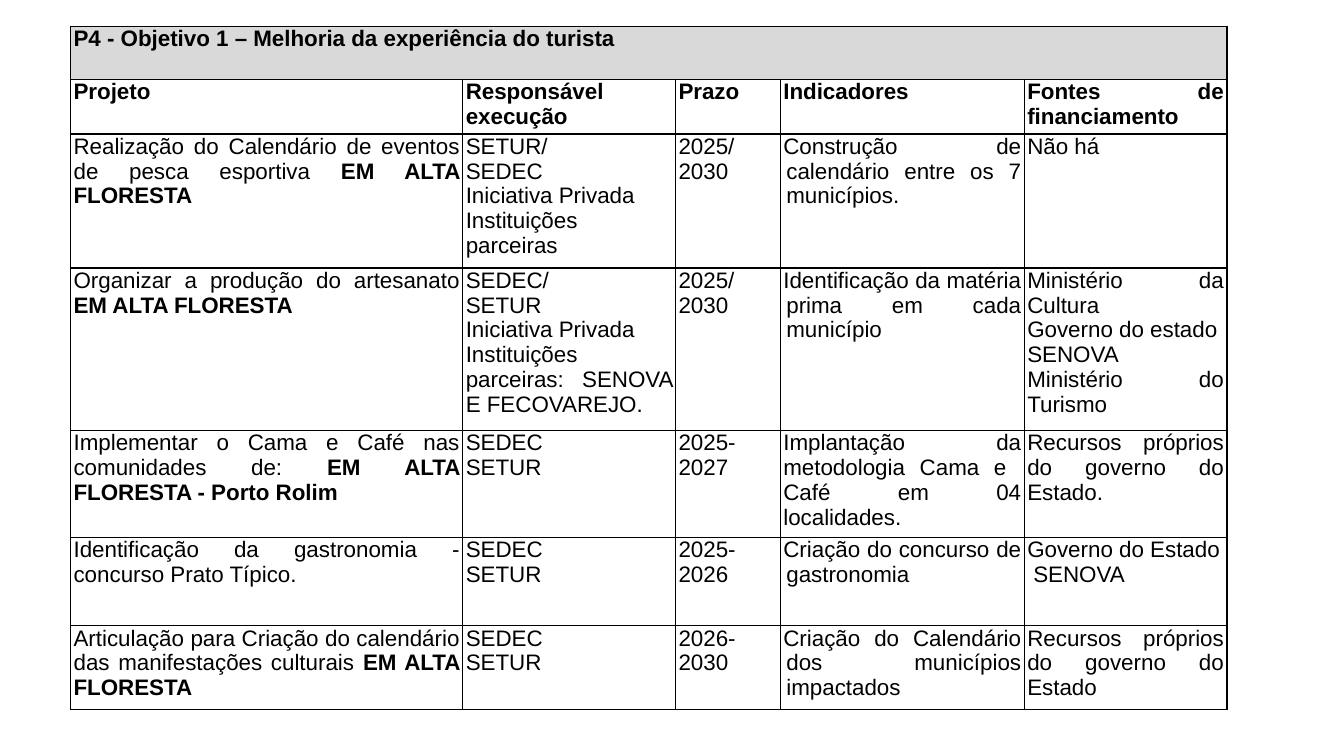
from dataclasses import dataclass

from lxml.etree import SubElement
from pptx import Presentation
from pptx.dml.color import RGBColor
from pptx.enum.text import MSO_ANCHOR as Anchor, PP_ALIGN as Align
from pptx.oxml.ns import qn
from pptx.util import Inches, Pt


@dataclass(frozen=True)
class Theme:
    """Colours, type and spacing of the slide."""
    font: str = "Arial"
    size: int = 16
    ink: str = "000000"
    heading_fill: str = "D9D9D9"
    border_points: int = 1
    cell_margin: float = 0.03


THEME = Theme()
COLUMN_WIDTHS = [3.89, 2.11, 1.04, 2.42, 2.01]
ROW_HEIGHTS = [0.53, 0.54, 1.33, 1.61, 1.06, 0.88, 0.83]
TITLE = "P4 - Objetivo 1 – Melhoria da experiência do turista"
HEADERS = ["Projeto", "Responsável execução", "Prazo", "Indicadores", "Fontes de financiamento"]
BOLD_MARK = "**"
PROJECTS = [
    ["Realização do Calendário de eventos de pesca esportiva **EM ALTA FLORESTA",
     ["SETUR/", "SEDEC", "Iniciativa Privada", "Instituições parceiras"],
     ["2025/", "2030"],
     "Construção de calendário entre os 7 municípios.",
     "Não há"],
    ["Organizar a produção do artesanato **EM ALTA FLORESTA",
     ["SEDEC/", "SETUR", "Iniciativa Privada", "Instituições parceiras: SENOVA E FECOVAREJO."],
     ["2025/", "2030"],
     "Identificação da matéria prima em cada município",
     ["Ministério da Cultura", "Governo do estado", "SENOVA", "Ministério do Turismo"]],
    ["Implementar o Cama e Café nas comunidades de: **EM ALTA FLORESTA - Porto Rolim",
     ["SEDEC", "SETUR"],
     "2025-2027",
     "Implantação da metodologia Cama e \nCafé em 04 localidades.",
     "Recursos próprios do governo do Estado."],
    ["Identificação da gastronomia - concurso Prato Típico.",
     ["SEDEC", "SETUR"],
     "2025-2026",
     "Criação do concurso de gastronomia",
     ["Governo do Estado", "SENOVA"]],
    ["Articulação para Criação do calendário das manifestações culturais **EM ALTA FLORESTA",
     ["SEDEC", "SETUR"],
     "2026-2030",
     "Criação do Calendário dos municípios impactados",
     "Recursos próprios do governo do Estado"],
]
HANGING = (0.03, -0.03)
INDENTS = {(row, 3): [HANGING] for row in (2, 3, 5, 6)}
INDENTS[5, 4] = [(0, 0), (0.06, 0)]


def add_run(paragraph, text, bold):
    """Add one run in the theme's type."""
    run = paragraph.add_run()
    run.text = text
    formats = {"name": THEME.font, "size": Pt(THEME.size), "bold": bold}
    for name, value in formats.items():
        setattr(run.font, name, value)
    run.font.color.rgb = RGBColor.from_string(THEME.ink)


def write_paragraph(paragraph, text, bold, indent):
    """Write justified text, bold after the mark, with line breaks and an indent."""
    paragraph.alignment = Align.JUSTIFY
    properties = paragraph._p.get_or_add_pPr()
    for name, length in zip(("marL", "indent"), indent):
        properties.set(name, str(Inches(length)))
    for part_index, part in enumerate(text.split(BOLD_MARK)):
        for line_index, line in enumerate(part.split("\n")):
            if line_index:
                paragraph.add_line_break()
            add_run(paragraph, line, bold or part_index > 0)


def write_cell(cell, content, bold, indents):
    """Fill a cell with one paragraph for each line of its content."""
    lines = [content] if isinstance(content, str) else content
    frame = cell.text_frame
    for index, line in enumerate(lines):
        paragraph = frame.paragraphs[0] if index == 0 else frame.add_paragraph()
        write_paragraph(paragraph, line, bold, indents[min(index, len(indents) - 1)])


def style_cell(cell, fill):
    """Set margins, fill and the four borders of a cell."""
    margin = Inches(THEME.cell_margin)
    formats = {"margin_left": margin, "margin_right": margin, "margin_top": 0,
               "margin_bottom": 0, "vertical_anchor": Anchor.TOP}
    for name, value in formats.items():
        setattr(cell, name, value)
    properties = cell._tc.get_or_add_tcPr()
    for side in ("a:lnL", "a:lnR", "a:lnT", "a:lnB"):
        line = SubElement(properties, qn(side), w=str(Pt(THEME.border_points)))
        SubElement(SubElement(line, qn("a:solidFill")), qn("a:srgbClr"), val=THEME.ink)
    if fill:
        cell.fill.solid()
        cell.fill.fore_color.rgb = RGBColor.from_string(fill)
    else:
        cell.fill.background()


def add_project_table(slide, left, top):
    """Place the table of projects with its merged heading row."""
    width, height = sum(COLUMN_WIDTHS), sum(ROW_HEIGHTS)
    table = slide.shapes.add_table(
        len(ROW_HEIGHTS), len(COLUMN_WIDTHS),
        Inches(left), Inches(top), Inches(width), Inches(height)).table
    table.first_row = table.horz_banding = False
    for column, column_width in zip(table.columns, COLUMN_WIDTHS):
        column.width = Inches(column_width)
    for row, row_height in zip(table.rows, ROW_HEIGHTS):
        row.height = Inches(row_height)
    for cell in table.rows[0].cells:
        style_cell(cell, THEME.heading_fill)
    table.cell(0, 0).merge(table.cell(0, len(COLUMN_WIDTHS) - 1))
    write_cell(table.cell(0, 0), TITLE, True, [(0, 0)])
    for row_index, contents in enumerate([HEADERS, *PROJECTS], start=1):
        for column_index, content in enumerate(contents):
            cell = table.cell(row_index, column_index)
            style_cell(cell, None)
            indents = INDENTS.get((row_index, column_index), [(0, 0)])
            write_cell(cell, content, row_index == 1, indents)


def main():
    """Build and save the presentation."""
    presentation = Presentation()
    presentation.slide_width, presentation.slide_height = Inches(13.33), Inches(7.5)
    slide = presentation.slides.add_slide(presentation.slide_layouts[6])
    add_project_table(slide, 0.7, 0.26)
    presentation.save("out.pptx")


if __name__ == "__main__":
    main()
